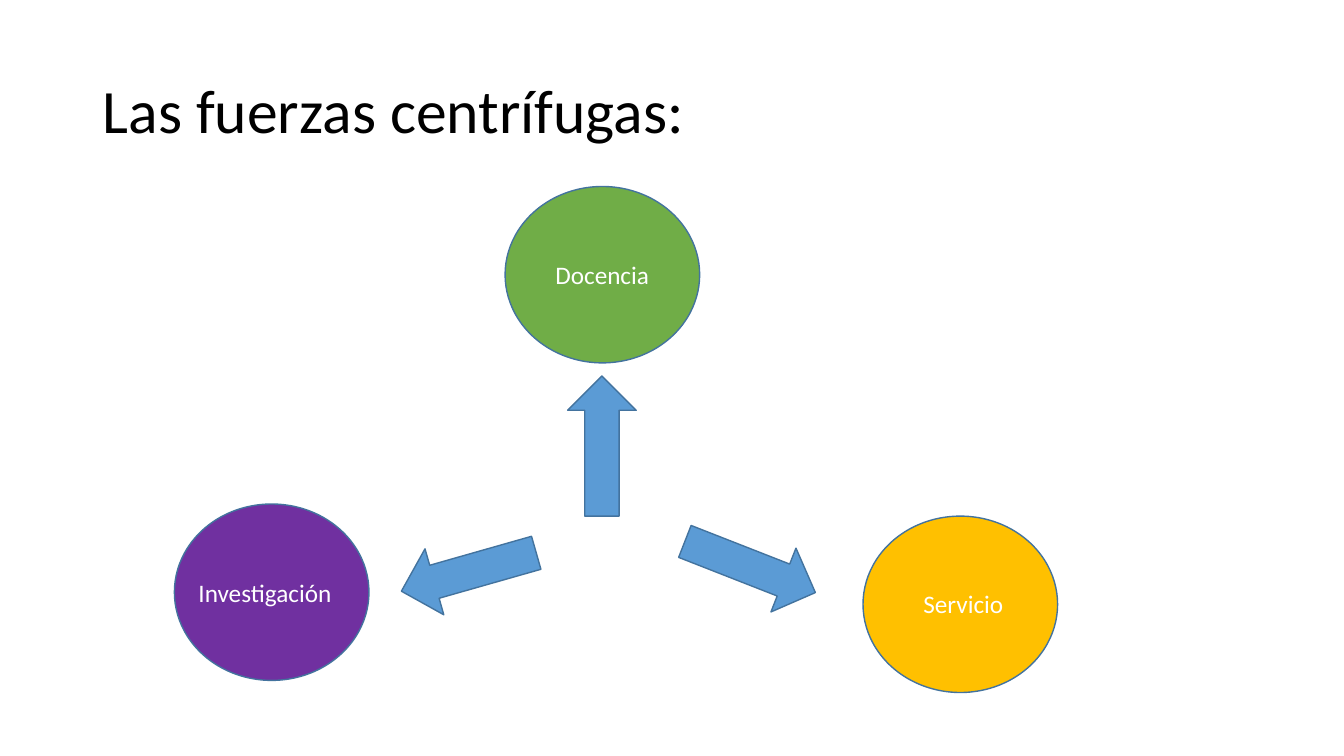
from pptx import Presentation
from pptx.dml.color import RGBColor
from pptx.enum.shapes import MSO_SHAPE as Shape
from pptx.enum.text import MSO_ANCHOR as Anchor
from pptx.util import Inches, Pt

TITLE = "Las fuerzas centrífugas:"
# label, circle left and top, circle colour, label left, top and width
FORCES = [
    ("Docencia", (5.01, 1.85), "70AD47", (5.41, 2.52, 1.37)),
    ("Investigación", (1.73, 5), "7030A0", (1.87, 5.68, 1.71)),
    ("Servicio", (8.56, 5.12), "FFC000", (9.06, 5.79, 1.33)),
]
# left, top, rotation
ARROWS = [(5.63, 3.73, 180), (4.31, 4.98, 74.1), (7.1, 4.93, 291.4)]
CIRCLE = (1.93, 1.75)
ARROW = (0.68, 1.39)
BLUE, EDGE = "5B9BD5", "43739E"

deck = Presentation()
deck.slide_width, deck.slide_height = Inches(13.33), Inches(7.5)
slide = deck.slides.add_slide(deck.slide_layouts[6])


def color(code):
    return RGBColor.from_string(code)


def add_form(kind, spot, size, fill, turn=0):
    form = slide.shapes.add_shape(kind, *map(Inches, (*spot, *size)))
    form.shadow.inherit = False
    form.rotation = turn
    form.fill.solid()
    form.fill.fore_color.rgb = color(fill)
    form.line.color.rgb = color(EDGE)
    form.line.width = Pt(1)


def add_text(text, box, size, code, anchor=Anchor.TOP, spacing=1.0):
    frame = slide.shapes.add_textbox(*map(Inches, box)).text_frame
    frame.word_wrap = True
    frame.vertical_anchor = anchor
    par = frame.paragraphs[0]
    par.line_spacing = spacing
    run = par.add_run()
    run.text = text
    for key, value in {"name": "Calibri", "size": Pt(size)}.items():
        setattr(run.font, key, value)
    run.font.color.rgb = color(code)


add_text(TITLE, (0.92, 0.4, 11.5, 1.45), 44, "000000", Anchor.MIDDLE, 0.9)
for label, spot, fill, place in FORCES:
    add_form(Shape.OVAL, spot, CIRCLE, fill)
for left, top, turn in ARROWS:
    add_form(Shape.DOWN_ARROW, (left, top), ARROW, BLUE, turn)
for label, spot, fill, place in FORCES:
    add_text(label, (*place, 0.4), 18, "FFFFFF")

deck.save("out.pptx")
